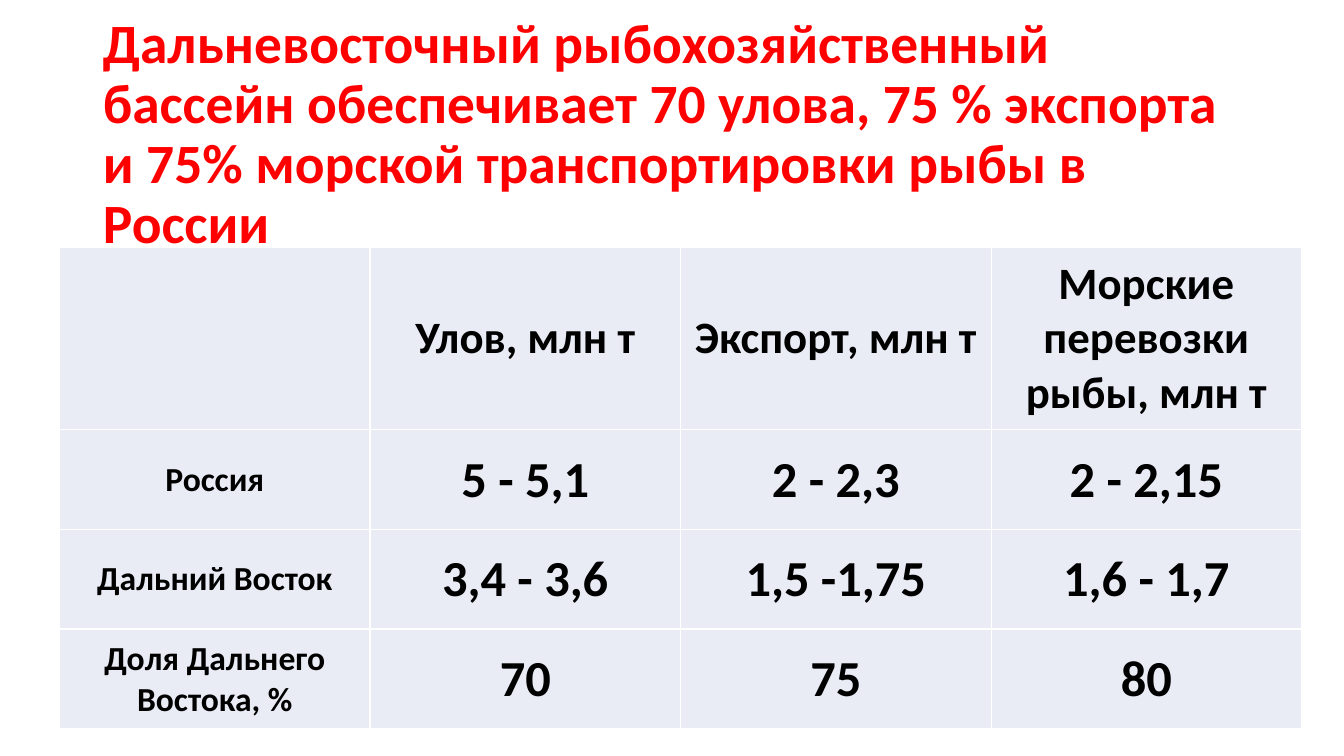
from lxml import etree
from pptx import Presentation
from pptx.dml.color import RGBColor
from pptx.enum.text import MSO_ANCHOR, MSO_AUTO_SIZE, PP_ALIGN
from pptx.oxml.ns import qn
from pptx.util import Inches, Pt

RED = RGBColor(0xFF, 0x00, 0x00)
BLACK = RGBColor(0x00, 0x00, 0x00)
WHITE = RGBColor(0xFF, 0xFF, 0xFF)
PALE_BLUE = RGBColor(0xE9, 0xEB, 0xF5)
MIDDLE = MSO_ANCHOR.MIDDLE
LEFT, CENTER = PP_ALIGN.LEFT, PP_ALIGN.CENTER
NO_AUTOFIT = MSO_AUTO_SIZE.NONE

HEADLINE = (
    "Дальневосточный рыбохозяйственный бассейн обеспечивает 70 улова, "
    "75 % экспорта и 75% морской транспортировки рыбы в России"
)
FISHERY_ROWS = [
    ["", "Улов, млн т", "Экспорт, млн т", "Морские перевозки рыбы, млн т"],
    ["Россия", "5 - 5,1", "2 - 2,3", "2 - 2,15"],
    ["Дальний Восток", "3,4 - 3,6", "1,5 -1,75", "1,6 - 1,7"],
    ["Доля Дальнего Востока, %", "70", "75", "80"],
]
ROW_HEIGHTS = [1.81, 0.99, 0.99, 0.99]
COLUMN_WIDTH = 3.08
HEADER_SIZE, REGION_SIZE, VALUE_SIZE = 32, 24, 36
CELL_FORMAT = {
    "margin_left": Inches(0.01),
    "margin_top": Inches(0.01),
    "margin_right": Inches(0.01),
    "margin_bottom": 0,
    "vertical_anchor": MIDDLE,
}


def write_text(frame, text, size, color, alignment):
    paragraph = frame.paragraphs[0]
    paragraph.alignment = alignment
    run = paragraph.add_run()
    run.text = text
    font_format = {"name": "Calibri", "size": Pt(size), "bold": True}
    for attribute, value in font_format.items():
        setattr(run.font, attribute, value)
    run.font.color.rgb = color
    return paragraph


def add_borders(cell, color, width):
    properties = cell._tc.get_or_add_tcPr()
    for position, side in enumerate(("lnL", "lnR", "lnT", "lnB")):
        line = etree.Element(qn(f"a:{side}"), w=str(Pt(width)))
        fill = etree.SubElement(line, qn("a:solidFill"))
        etree.SubElement(fill, qn("a:srgbClr"), val=str(color))
        properties.insert(position, line)


prs = Presentation()
prs.slide_width = Inches(13.33)
prs.slide_height = Inches(7.5)
slide = prs.slides.add_slide(prs.slide_layouts[5])

headline = slide.shapes.title
headline_box = {
    "left": Inches(0.92),
    "top": Inches(0.4),
    "width": Inches(11.5),
    "height": Inches(1.89),
}
for attribute, value in headline_box.items():
    setattr(headline, attribute, value)
headline_frame = headline.text_frame
headline_format = {"word_wrap": True, "auto_size": NO_AUTOFIT, "vertical_anchor": MIDDLE}
for attribute, value in headline_format.items():
    setattr(headline_frame, attribute, value)
headline_paragraph = write_text(headline_frame, HEADLINE, 39.6, RED, LEFT)
headline_paragraph.line_spacing = 0.9

column_count = len(FISHERY_ROWS[0])
fishery = slide.shapes.add_table(
    len(FISHERY_ROWS), column_count, Inches(0.59), Inches(2.45),
    Inches(COLUMN_WIDTH * column_count), Inches(sum(ROW_HEIGHTS)),
).table
for column in fishery.columns:
    column.width = Inches(COLUMN_WIDTH)

for row_index, (labels, height) in enumerate(zip(FISHERY_ROWS, ROW_HEIGHTS)):
    fishery.rows[row_index].height = Inches(height)
    for column_index, label in enumerate(labels):
        cell = fishery.cell(row_index, column_index)
        for attribute, value in CELL_FORMAT.items():
            setattr(cell, attribute, value)
        cell.fill.solid()
        cell.fill.fore_color.rgb = PALE_BLUE
        add_borders(cell, WHITE, 1)
        if row_index == 0:
            size = HEADER_SIZE
        elif column_index == 0:
            size = REGION_SIZE
        else:
            size = VALUE_SIZE
        if label:
            write_text(cell.text_frame, label, size, BLACK, CENTER)

prs.save("out.pptx")
